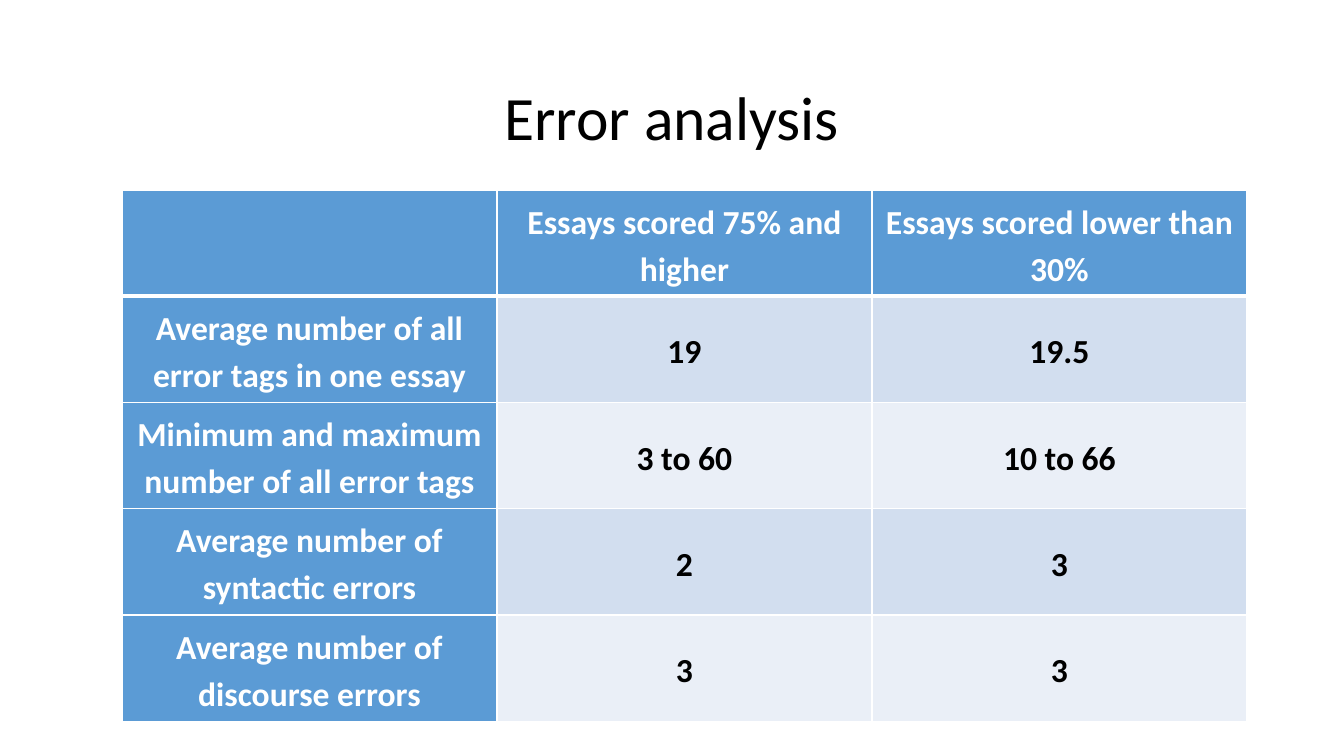
from lxml import etree
from pptx import Presentation
from pptx.dml.color import RGBColor
from pptx.enum.text import MSO_ANCHOR, PP_ALIGN
from pptx.oxml.ns import qn
from pptx.util import Pt

MID = MSO_ANCHOR.MIDDLE
CENTER = PP_ALIGN.CENTER
PX = 914400 / 100.8
WIDE, HIGH = 1344, 756
FONT = "Calibri"
HUES = {
    "head": "5B9BD5",
    "odd": "D2DEEF",
    "even": "EAEFF7",
    "white": "FFFFFF",
    "black": "000000",
}
ROWS = [
    ["", "Essays scored 75% and higher", "Essays scored lower than 30%"],
    ["Average number of all error tags in one essay", "19", "19.5"],
    ["Minimum and maximum number of all error tags", "3 to 60", "10 to 66"],
    ["Average number of syntactic errors", "2", "3"],
    ["Average number of discourse errors", "3", "3"],
]


def px(num):
    """Turn pixels into EMU."""
    return round(num * PX)


def hue(name):
    """Return the named colour."""
    return RGBColor.from_string(HUES[name])


def write(frame, text, size=24, color="black", bold=False, lead=1.15, after=10):
    """Write one centred paragraph into a text frame."""
    para = frame.paragraphs[0]
    para.alignment = CENTER
    para.line_spacing = lead
    para.space_after = Pt(after)
    run = para.add_run()
    run.text = text
    font = run.font
    font.name, font.size, font.bold = FONT, Pt(size), bold
    font.color.rgb = hue(color)


def edge(cell, base):
    """Draw white borders around a cell, with the given top and bottom widths."""
    props = cell._tc.get_or_add_tcPr()
    for spot, (side, width) in enumerate(base.items()):
        line = etree.Element(qn("a:ln" + side), w=str(Pt(width)))
        fill = etree.SubElement(line, qn("a:solidFill"))
        etree.SubElement(fill, qn("a:srgbClr"), val=HUES["white"])
        props.insert(spot, line)


def title(slide, text, left, top, width, height):
    """Place the slide title in its box."""
    shape = slide.shapes.title
    shape.left, shape.top = px(left), px(top)
    shape.width, shape.height = px(width), px(height)
    shape.text_frame.vertical_anchor = MID
    write(shape.text_frame, text, size=44, lead=0.9, after=0)


def grid(slide, rows, left, top, width, height):
    """Place a table with a header row and a header column in its box."""
    box = map(px, (left, top, width, height))
    table = slide.shapes.add_table(len(rows), len(rows[0]), *box).table
    for r, row in enumerate(rows):
        for c, text in enumerate(row):
            cell = table.cell(r, c)
            head = r == 0 or c == 0
            cell.fill.solid()
            cell.fill.fore_color.rgb = hue("head" if head else "odd" if r % 2 else "even")
            edge(cell, {"L": 1, "R": 1, "T": 3 if r == 1 else 1, "B": 1 if r else 3})
            cell.vertical_anchor = MID
            cell.margin_left = cell.margin_right = px(6)
            cell.margin_top = cell.margin_bottom = px(6)
            if text:
                write(cell.text_frame, text, color="white" if head else "black", bold=True)


def main():
    """Build and save the slide."""
    deck = Presentation()
    deck.slide_width, deck.slide_height = px(WIDE), px(HIGH)
    slide = deck.slides.add_slide(deck.slide_layouts[5])
    title(slide, "Error analysis", 143, 68, 1058, 105)
    grid(slide, ROWS, 122, 190, 1125, 525)
    deck.save("out.pptx")


if __name__ == "__main__":
    main()
